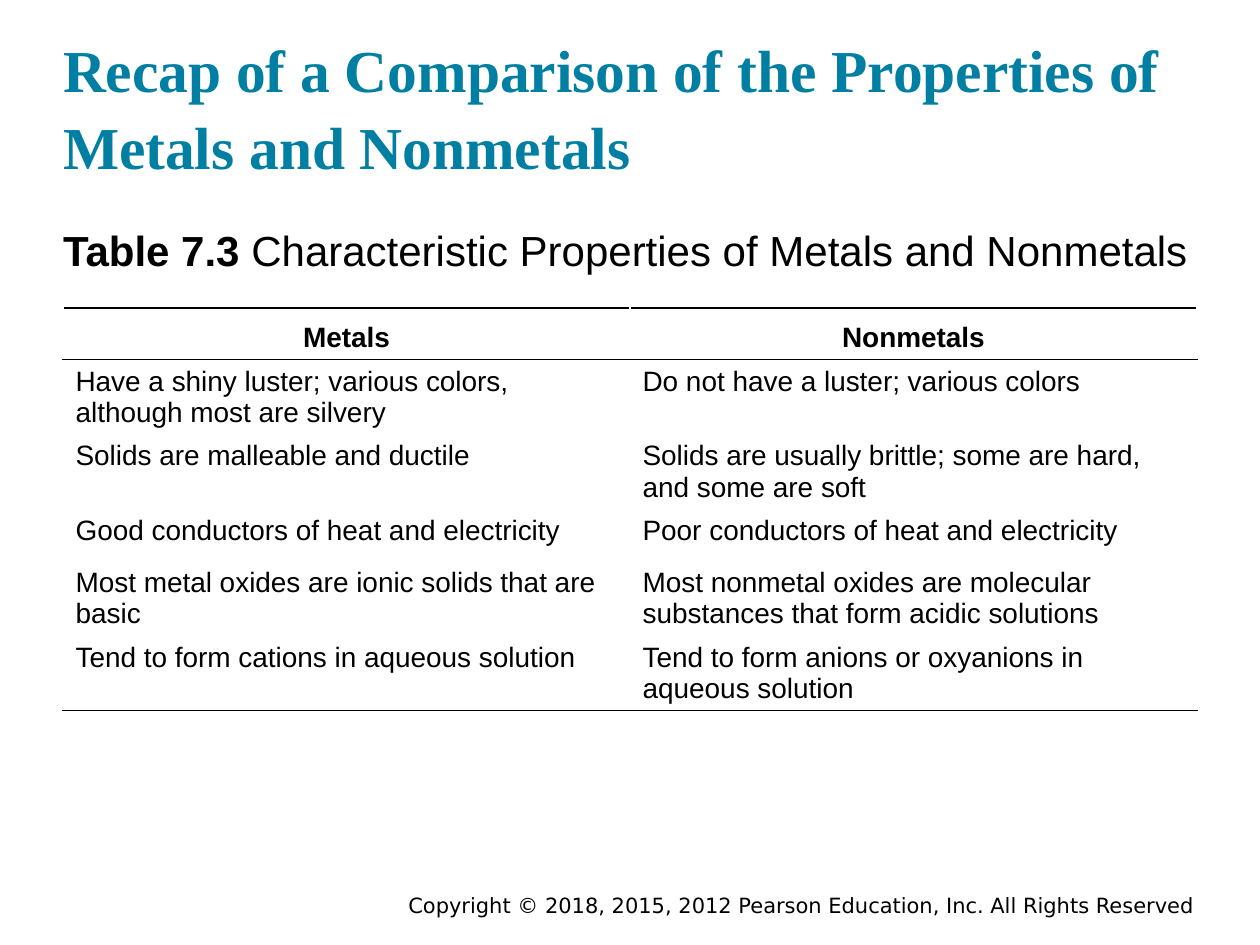
from lxml import etree
from pptx import Presentation
from pptx.dml.color import RGBColor
from pptx.enum.text import MSO_ANCHOR, MSO_AUTO_SIZE, PP_ALIGN
from pptx.oxml.ns import qn
from pptx.util import Pt

LEFT, MID, RIGHT = PP_ALIGN.LEFT, PP_ALIGN.CENTER, PP_ALIGN.RIGHT
TOP, BASE = MSO_ANCHOR.TOP, MSO_ANCHOR.BOTTOM

# Content
TITLE = "Recap of a Comparison of the Properties of Metals and Nonmetals"
LABEL, CAPTION = "Table 7.3 ", "Characteristic Properties of Metals and Nonmetals"
ROWS = [
    ("Metals", "Nonmetals"),
    ("Have a shiny luster; various colors, although most are silvery",
     "Do not have a luster; various colors"),
    ("Solids are malleable and ductile",
     "Solids are usually brittle; some are hard, and some are soft"),
    ("Good conductors of heat and electricity",
     "Poor conductors of heat and electricity"),
    ("Most metal oxides are ionic solids that are basic",
     "Most nonmetal oxides are molecular substances that form acidic solutions"),
    ("Tend to form cations in aqueous solution",
     "Tend to form anions or oxyanions in aqueous solution"),
]
RIGHTS = "Copyright © 2018, 2015, 2012 Pearson Education, Inc. All Rights Reserved"

# Formats
BLACK, WHITE, TEAL = "000000", "FFFFFF", "007FA3"
HEAD = dict(name="Times New Roman", size=Pt(34), bold=True)
LEAD = dict(name="Arial", size=Pt(24), bold=True)
NOTE = dict(name="Arial", size=Pt(24), bold=False)
CELL = dict(name="Arial", size=Pt(16))
FOOT = dict(name="DejaVu Sans", size=Pt(12), bold=False)
EDGE, WIDE, ROW = 36, 648, 29.5


def color(code):
    return RGBColor.from_string(code)


def add_run(para, text, style, code=BLACK):
    run = para.add_run()
    run.text = text
    for key, value in style.items():
        setattr(run.font, key, value)
    run.font.color.rgb = color(code)


def place(shape, x, y, w, h):
    shape.left, shape.top, shape.width, shape.height = map(Pt, (x, y, w, h))


def set_frame(shape, anchor):
    frame = shape.text_frame
    frame.word_wrap = True
    frame.auto_size = MSO_AUTO_SIZE.NONE
    frame.vertical_anchor = anchor
    for side in ("left", "top", "right", "bottom"):
        setattr(frame, "margin_" + side, 0)
    para = frame.paragraphs[0]
    para.alignment = LEFT
    para.line_spacing = 1.08
    para.space_before = Pt(0)
    return para


def add_rule(cell, tag):
    props = cell._tc.get_or_add_tcPr()
    line = etree.Element(qn("a:" + tag), w=str(Pt(1)))
    fill = etree.SubElement(line, qn("a:solidFill"))
    etree.SubElement(fill, qn("a:srgbClr"), val=BLACK)
    # Borders come before the cell fill
    props.insert(len(props.findall(qn("a:lnT"))), line)


deck = Presentation()
deck.slide_width, deck.slide_height = Pt(720), Pt(540)
slide = deck.slides.add_slide(deck.slide_layouts[1])

# Title
title = slide.shapes.title
place(title, EDGE, 17.3, WIDE, 86.4)
add_run(set_frame(title, BASE), TITLE, HEAD, TEAL)

# Table caption, without bullet
body = slide.placeholders[1]
place(body, EDGE, 126, WIDE, 30.2)
para = set_frame(body, TOP)
props = para._p.get_or_add_pPr()
props.set("marL", "0")
props.set("indent", "0")
etree.SubElement(props, qn("a:buNone"))
add_run(para, LABEL, LEAD)
add_run(para, CAPTION, NOTE)

# Table
last = len(ROWS) - 1
table = slide.shapes.add_table(len(ROWS), 2, Pt(EDGE), Pt(176), Pt(WIDE),
                               Pt(ROW * len(ROWS))).table
table.first_row = table.horz_banding = False
for r, texts in enumerate(ROWS):
    table.rows[r].height = Pt(ROW)
    for c, text in enumerate(texts):
        cell = table.cell(r, c)
        cell.fill.solid()
        cell.fill.fore_color.rgb = color(WHITE)
        cell.vertical_anchor = TOP if r else BASE
        para = cell.text_frame.paragraphs[0]
        para.alignment = LEFT if r else MID
        add_run(para, text, dict(CELL, bold=r == 0))
        if r < 2:
            add_rule(cell, "lnT")
        if r in (0, last):
            add_rule(cell, "lnB")

# Copyright line
foot = slide.shapes.add_textbox(Pt(126), Pt(506.2), Pt(563.8), Pt(21.6))
foot.text_frame.word_wrap = True
para = foot.text_frame.paragraphs[0]
para.alignment = RIGHT
add_run(para, RIGHTS, FOOT)

deck.save("out.pptx")
